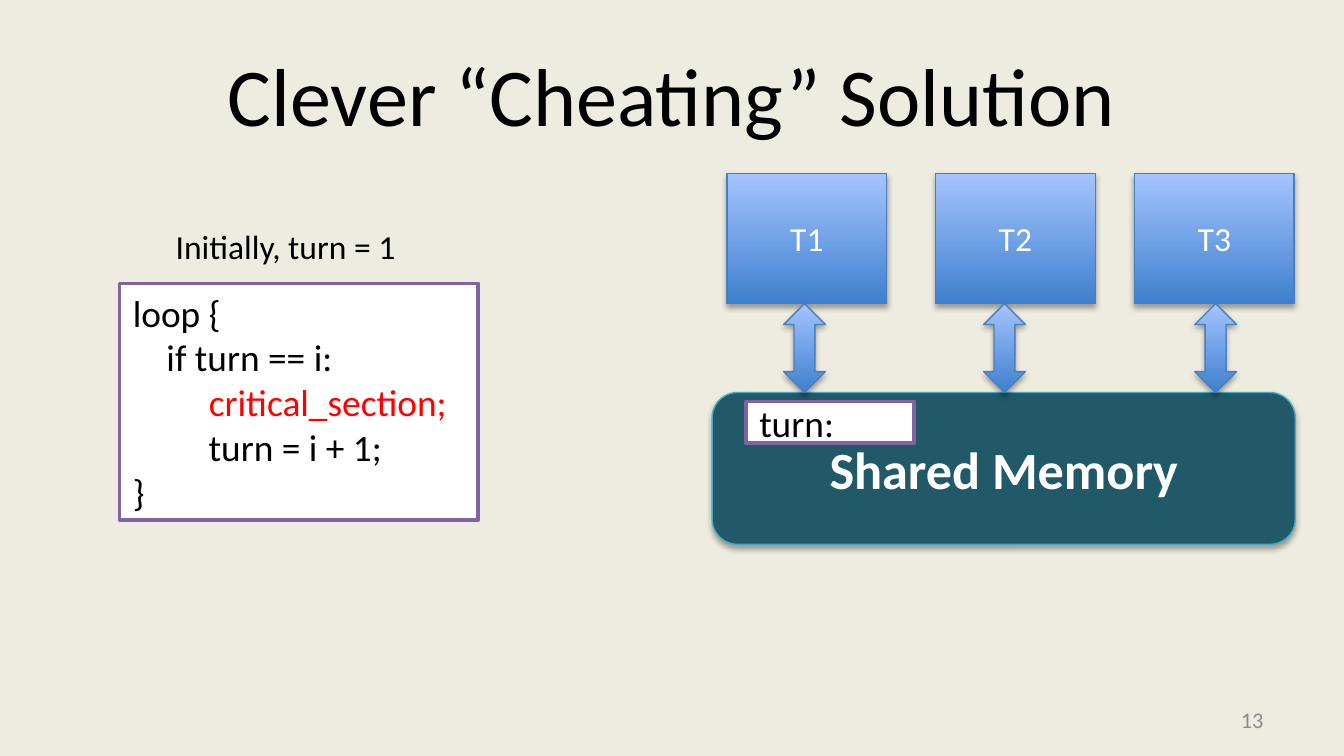
from lxml import etree
from pptx import Presentation
from pptx.dml.color import RGBColor
from pptx.enum.shapes import MSO_SHAPE
from pptx.enum.text import MSO_ANCHOR, PP_ALIGN
from pptx.oxml.ns import qn
from pptx.util import Cm, Pt


def rgb(hex_color):
    return RGBColor.from_string(hex_color)


class Deck:
    FONT = "Calibri"
    BLACK, WHITE, RED, GREY = "000000", "FFFFFF", "FF0000", "8C8C8C"
    PURPLE, TEAL, TEAL_LINE = "8064A2", "215968", "46AAC5"
    BLUE_DARK, BLUE_LIGHT, BLUE_LINE = "3F80CE", "A4C4FF", "4B7EBC"

    def __init__(self, prs):
        self.s = prs.slides.add_slide(prs.slide_layouts[5])
        self.s.background.fill.solid()
        self.s.background.fill.fore_color.rgb = rgb("EEECE1")

    def set_text(self, sp, lines, size, color, align=PP_ALIGN.LEFT,
                 anchor=MSO_ANCHOR.MIDDLE, bold=False, wrap=True):
        """Fill a shape; each line is a list of (text, colour or None) runs."""
        tf = sp.text_frame
        tf.word_wrap = wrap
        tf.vertical_anchor = anchor
        for i, runs in enumerate(lines):
            p = tf.add_paragraph() if i else tf.paragraphs[0]
            p.alignment = align
            p.font.name, p.font.size, p.font.bold = self.FONT, Pt(size), bold
            p.font.color.rgb = rgb(color)
            for text, run_color in runs:
                r = p.add_run()
                r.text = text
                # Shape styles and placeholders can override paragraph defaults
                r.font.color.rgb = rgb(run_color or color)

    def title(self, text, *box):
        sp = self.s.shapes.title
        sp.left, sp.top, sp.width, sp.height = map(Cm, box)
        self.set_text(sp, [[(text, None)]], 44, self.BLACK, PP_ALIGN.CENTER)

    def label(self, text, box, size, color, **style):
        sp = self.s.shapes.add_textbox(*map(Cm, box))
        self.set_text(sp, [[(text, None)]], size, color, **style)

    def shape(self, kind, box, line, width, fill=None):
        """Add a shape, with the blue gradient when no fill is given."""
        sp = self.s.shapes.add_shape(kind, *map(Cm, box))
        sp.shadow.inherit = False
        if fill:
            sp.fill.solid()
            sp.fill.fore_color.rgb = rgb(fill)
        else:
            sp.fill.gradient()
            sp.fill.gradient_angle = 90
            for stop, color in zip(sp.fill.gradient_stops,
                                   (self.BLUE_DARK, self.BLUE_LIGHT)):
                stop.color.rgb = rgb(color)
        sp.line.color.rgb = rgb(line)
        sp.line.width = Pt(width)
        return sp

    def drop_shadow(self, sp):
        effects = sp._element.spPr.find(qn("a:effectLst"))
        shadow = etree.SubElement(
            effects, qn("a:outerShdw"), blurRad=str(Pt(3.1)),
            dist=str(Pt(1.8)), dir="5400000", rotWithShape="0")
        color = etree.SubElement(shadow, qn("a:srgbClr"), val=self.BLACK)
        etree.SubElement(color, qn("a:alpha"), val="35000")

    def code_box(self, lines, *box):
        sp = self.shape(MSO_SHAPE.RECTANGLE, box, self.PURPLE, 2, self.WHITE)
        self.set_text(sp, lines, 20, self.BLACK)

    def thread(self, name, *box):
        sp = self.shape(MSO_SHAPE.RECTANGLE, box, self.BLUE_LINE, 0.75)
        self.drop_shadow(sp)
        self.set_text(sp, [[(name, None)]], 18, self.WHITE, PP_ALIGN.CENTER)

    def memory(self, text, *box):
        sp = self.shape(MSO_SHAPE.ROUNDED_RECTANGLE, box, self.TEAL_LINE,
                        0.75, self.TEAL)
        self.drop_shadow(sp)
        self.set_text(sp, [[(text, None)]], 28, self.WHITE, PP_ALIGN.CENTER,
                      bold=True)

    def access_arrow(self, *box):
        self.drop_shadow(self.shape(MSO_SHAPE.UP_DOWN_ARROW, box,
                                    self.BLUE_LINE, 0.75))


def main():
    prs = Presentation()
    prs.slide_width, prs.slide_height = Cm(25.4), Cm(14.29)
    deck = Deck(prs)

    deck.title("Clever “Cheating” Solution", 1.27, 0.58, 22.86, 2.39)
    deck.label("13", (18.21, 13.23, 5.92, 0.76), 12, deck.GREY,
               align=PP_ALIGN.RIGHT)
    deck.code_box([
        [("loop {", None)],
        [("    if turn == i:", None)],
        [("         ", None), ("critical_section;", deck.RED)],
        [("         turn = i + 1;", None)],
        [("}", None)],
    ], 2.26, 5.36, 6.78, 4.47)

    for name, left in (("T1", 13.74), ("T2", 17.68), ("T3", 21.44)):
        deck.thread(name, left, 3.28, 3.02, 2.46)
    deck.memory("Shared Memory", 13.46, 7.42, 11.02, 2.87)
    for left in (14.81, 18.59, 22.58):
        deck.access_arrow(left, 5.74, 0.79, 1.68)
    deck.code_box([[("turn:", None)]], 14.1, 7.59, 3.18, 0.79)
    deck.label("Initially, turn = 1", (3.07, 4.14, 4.75, 1.02), 18,
               deck.BLACK, anchor=MSO_ANCHOR.TOP, wrap=False)

    prs.save("out.pptx")


if __name__ == "__main__":
    main()
